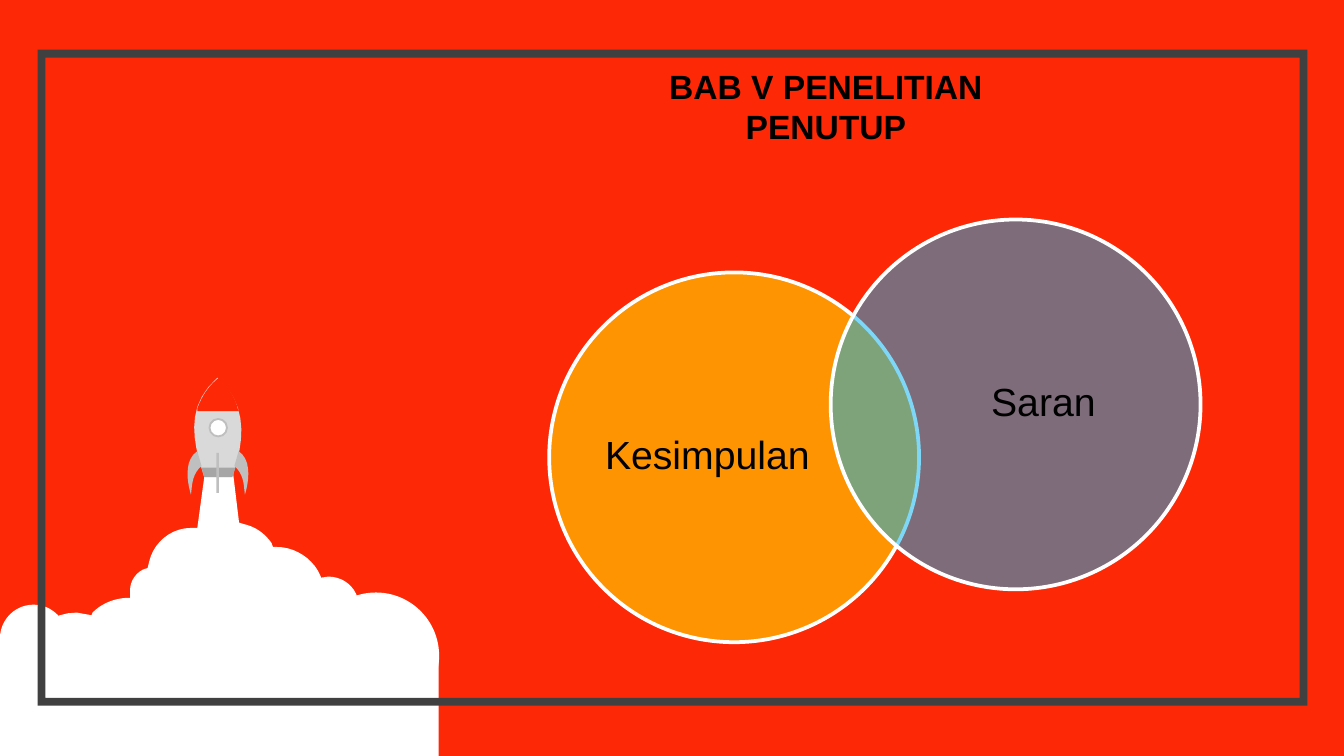
from dataclasses import dataclass
from typing import Optional

from lxml import etree
from pptx import Presentation
from pptx.dml.color import RGBColor
from pptx.enum import shapes, text
from pptx.oxml.ns import qn
from pptx.util import Cm, Pt

COLORS = {
    "background": "FD2906", "cloud": "FFFFFF", "body": "D9D9D9", "band": "A6A6A6",
    "metal": "BFBFBF", "frame": "404040", "text": "000000", "outline": "FFFFFF",
    "yellow": "FFFF00", "blue": "00B0F0",
}
FONT = "Arial"
SLIDE_WIDTH, SLIDE_HEIGHT = 25.4, 14.29
CURVE_STEPS = 10
ROCKET_AXIS = 4.12
CIRCLE_SIZE = 6.99
LABEL_WIDTH, LABEL_HEIGHT = 4.04, 5.33


@dataclass
class Preset:
    kind: shapes.MSO_SHAPE
    box: tuple
    color: str
    line: Optional[str] = None
    line_points: float = 1


@dataclass
class Outline:
    """Each step is a point (x, y), or a Bézier curve of three points (6 numbers)."""
    steps: list
    color: str


@dataclass
class VennCircle:
    label: str
    position: tuple
    label_position: tuple
    color: str


OVAL, RECTANGLE = shapes.MSO_SHAPE.OVAL, shapes.MSO_SHAPE.RECTANGLE

CLOUD_BASE = [
    Preset(RECTANGLE, (7.01, 12.34, 1.28, 1.95), "cloud"),
    Preset(OVAL, (5.91, 11.2, 2.39, 2.39), "cloud"),
    Preset(RECTANGLE, (0, 12.12, 1.24, 2.17), "cloud"),
    Preset(OVAL, (0, 11.43, 1.27, 1.27), "cloud"),
]

CLOUD = Outline([
    (3.89, 8.81), (4.39, 8.81), (4.52, 9.88), (4.62, 9.91),
    (4.83, 9.96, 5, 10.08, 5.13, 10.26), (5.16, 10.34), (5.23, 10.34),
    (5.59, 10.34, 5.92, 10.57, 6.05, 10.87), (6.07, 10.92), (6.2, 10.9),
    (6.5, 10.9, 6.73, 11.1, 6.78, 11.38), (6.78, 11.43), (6.96, 11.43),
    (7.06, 11.46), (7.06, SLIDE_HEIGHT), (0.94, SLIDE_HEIGHT),
    (0.81, 14.17, 0.71, 14.07, 0.69, 13.92), (0.66, 13.84),
    (0.56, 13.92, 0.43, 13.97, 0.28, 13.97),
    (0.2, 13.97, 0.1, 13.94, 0.03, 13.92), (0, 13.89), (0, 12.7),
    (0.1, 12.65, 0.2, 12.65, 0.28, 12.65), (0.46, 12.67), (0.43, 12.6),
    (0.43, 12.04, 0.89, 11.58, 1.45, 11.58), (1.73, 11.63), (1.75, 11.58),
    (1.93, 11.4, 2.18, 11.3, 2.46, 11.3), (2.46, 11.15),
    (2.46, 10.95, 2.62, 10.77, 2.79, 10.74), (2.82, 10.62),
    (2.9, 10.26, 3.23, 9.98, 3.61, 9.98), (3.73, 9.98),
], "cloud")

ROCKET = [
    Outline([(3.86, 9.02), (3.68, 8.43, 3.45, 7.72, 4.11, 7.14),
             (4.78, 7.72, 4.55, 8.53, 4.39, 9.02)], "body"),
    Outline([(3.81, 8.84), (4.45, 8.84), (4.39, 9.02), (3.86, 9.02)], "band"),
    Outline([(4.14, 7.14), (4.32, 7.32, 4.45, 7.52, 4.5, 7.75), (4.52, 7.77),
             (3.73, 7.77), (3.73, 7.72), (3.81, 7.52, 3.91, 7.32, 4.14, 7.14)],
            "background"),
]
ROCKET_DETAILS = [
    Preset(OVAL, (3.96, 7.92, 0.33, 0.33), "cloud", "metal"),
    Preset(RECTANGLE, (4.09, 8.56, 0.05, 0.76), "metal"),
]
FIN = Outline([(3.73, 8.53), (3.81, 8.81), (3.61, 8.97, 3.63, 9.25, 3.61, 9.35),
               (3.56, 9.19, 3.45, 8.71, 3.73, 8.53)], "metal")

FRAME = Preset(shapes.MSO_SHAPE.FRAME, (0.71, 0.94, 24, 12.4), "frame")

VENN = [
    VennCircle("Kesimpulan", (10.38, 5.15), (11.35, 5.97), "yellow"),
    VennCircle("Saran", (15.7, 4.15), (17.7, 4.97), "blue"),
]


def rgb(name: str) -> RGBColor:
    return RGBColor.from_string(COLORS[name])


def paint(shape, color: str, line: Optional[str] = None, points: float = 1) -> None:
    shape.shadow.inherit = False
    shape.fill.solid()
    shape.fill.fore_color.rgb = rgb(color)
    if line is None:
        shape.line.fill.background()
    else:
        shape.line.color.rgb = rgb(line)
        shape.line.width = Pt(points)


def add_preset(slide, preset: Preset):
    shape = slide.shapes.add_shape(preset.kind, *map(Cm, preset.box))
    paint(shape, preset.color, preset.line, preset.line_points)
    return shape


def flatten(steps: list) -> list:
    """Turn points and curves into one list of points."""
    points = [steps[0]]
    for step in steps[1:]:
        if len(step) == 2:
            points.append(step)
            continue
        controls = (points[-1], step[:2], step[2:4], step[4:])
        for index in range(1, CURVE_STEPS + 1):
            t = index / CURVE_STEPS
            weights = ((1 - t) ** 3, 3 * t * (1 - t) ** 2, 3 * t * t * (1 - t), t ** 3)
            points.append(tuple(
                sum(w * control[axis] for w, control in zip(weights, controls))
                for axis in (0, 1)))
    return points


def add_outline(slide, outline: Outline, mirrored: bool = False) -> None:
    points = [(Cm(2 * ROCKET_AXIS - x if mirrored else x), Cm(y))
              for x, y in flatten(outline.steps)]
    builder = slide.shapes.build_freeform(*points[0])
    builder.add_line_segments(points[1:], close=True)
    paint(builder.convert_to_shape(), outline.color)


def format_runs(paragraph, size: float, bold: bool = False) -> None:
    paragraph.alignment = text.PP_ALIGN.CENTER
    for run in paragraph.runs:
        run.font.name, run.font.size, run.font.bold = FONT, Pt(size), bold
        run.font.color.rgb = rgb("text")


def add_venn_circle(slide, circle: VennCircle) -> None:
    shape = add_preset(slide, Preset(
        OVAL, (*circle.position, CIRCLE_SIZE, CIRCLE_SIZE), circle.color, "outline", 2))
    color = shape._element.spPr.find(qn("a:solidFill"))[0]
    etree.SubElement(color, qn("a:alpha"), val="50000")

    label = slide.shapes.add_textbox(
        *map(Cm, (*circle.label_position, LABEL_WIDTH, LABEL_HEIGHT)))
    frame = label.text_frame
    frame.text = circle.label
    frame.word_wrap = True
    frame.vertical_anchor = text.MSO_ANCHOR.MIDDLE
    frame.margin_left = frame.margin_right = frame.margin_top = frame.margin_bottom = 0
    frame.paragraphs[0].line_spacing = 0.9
    format_runs(frame.paragraphs[0], 21)


def set_title(slide) -> None:
    title = slide.shapes.title
    title.left, title.top, title.width, title.height = map(Cm, (8.31, 1.12, 14.6, 1.8))
    frame = title.text_frame
    frame.text = "BAB V PENELITIAN\nPENUTUP"
    frame.auto_size = text.MSO_AUTO_SIZE.NONE
    frame.vertical_anchor = text.MSO_ANCHOR.TOP
    for paragraph in frame.paragraphs:
        format_runs(paragraph, 18, bold=True)


def main() -> None:
    presentation = Presentation()
    presentation.slide_width, presentation.slide_height = Cm(SLIDE_WIDTH), Cm(SLIDE_HEIGHT)
    slide = presentation.slides.add_slide(presentation.slide_layouts[5])
    slide.background.fill.solid()
    slide.background.fill.fore_color.rgb = rgb("background")

    for preset in CLOUD_BASE:
        add_preset(slide, preset)
    for outline in [CLOUD, *ROCKET]:
        add_outline(slide, outline)
    for preset in ROCKET_DETAILS:
        add_preset(slide, preset)
    for mirrored in (False, True):
        add_outline(slide, FIN, mirrored)
    add_preset(slide, FRAME).adjustments[0] = 0.012
    set_title(slide)
    for circle in VENN:
        add_venn_circle(slide, circle)
    presentation.save("out.pptx")


if __name__ == "__main__":
    main()
